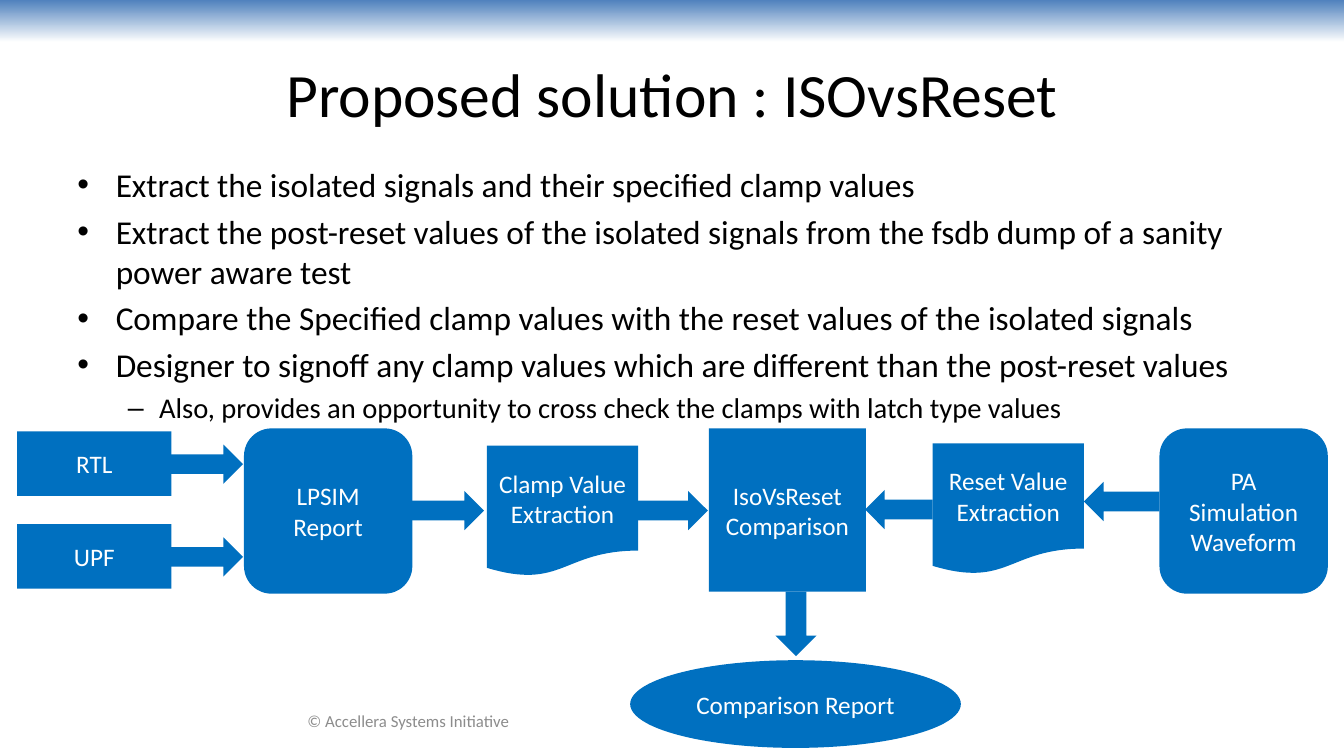
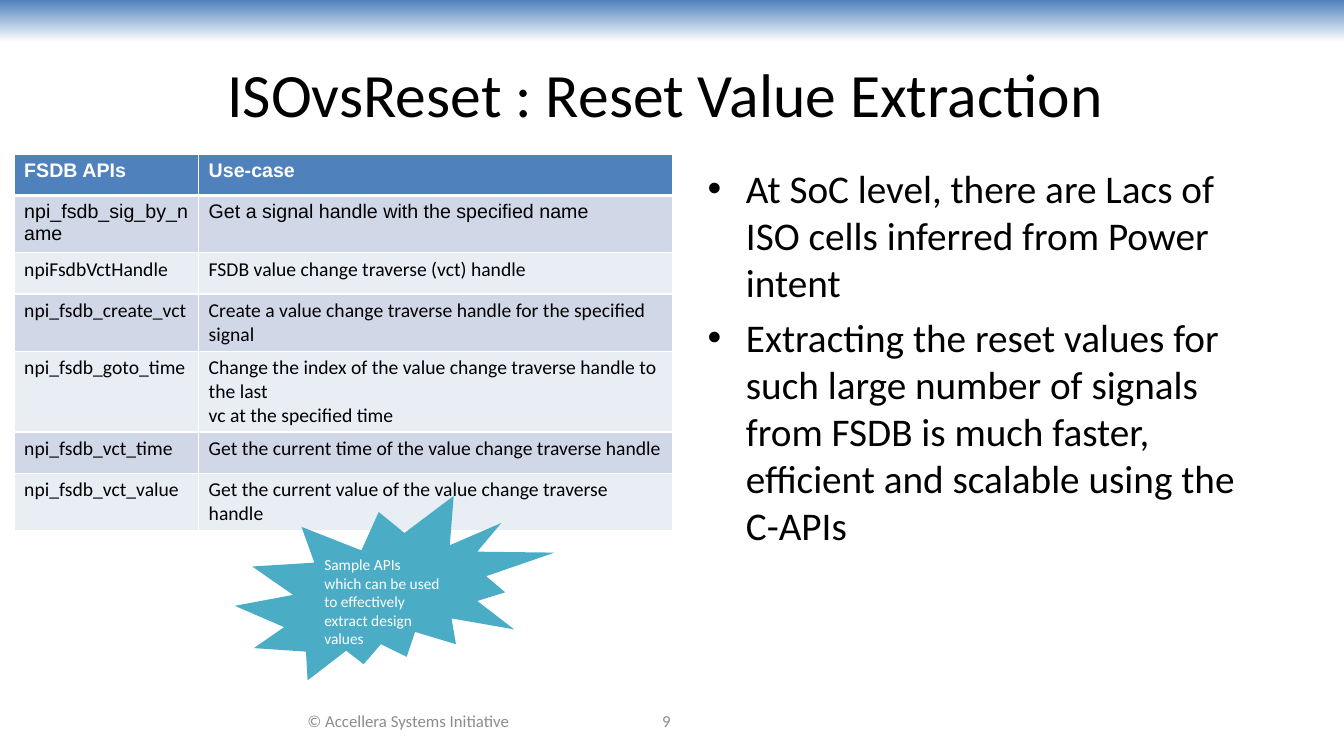
from dataclasses import dataclass
from typing import NamedTuple, Optional

from lxml.etree import SubElement
from pptx import Presentation
from pptx.dml.color import RGBColor
from pptx.enum.shapes import MSO_SHAPE as Preset
from pptx.enum.text import MSO_ANCHOR as Anchor, PP_ALIGN as Align
from pptx.oxml.ns import qn
from pptx.util import Inches, Pt

SLIDE_W, SLIDE_H = 13.33, 7.5
BLACK, WHITE, GREY = "000000", "FFFFFF", "8C8C8C"
BAND_BLUE, FLOW_BLUE, TEAL = "4F81BD", "0070C0", "4BACC6"
ROW_FILLS = ("D0D8E8", "E9EDF4")


class Box(NamedTuple):
    left: float
    top: float
    width: float
    height: float

    def inches(self):
        return [Inches(value) for value in self]


@dataclass(frozen=True)
class TextStyle:
    size: float
    color: str = BLACK
    font: str = "Calibri"
    bold: bool = False
    align: Align = Align.LEFT
    anchor: Anchor = Anchor.TOP


@dataclass(frozen=True)
class Step:
    label: str
    preset: Preset
    box: Box


@dataclass(frozen=True)
class Arrow:
    preset: Preset
    box: Box


@dataclass(frozen=True)
class Bullet:
    text: str
    size: float
    mark: str = "•"
    indent: float = 0.38
    hanging: float = 0.38


TITLE = TextStyle(44, align=Align.CENTER, anchor=Anchor.MIDDLE)
FOOTER = TextStyle(12, GREY, align=Align.CENTER, anchor=Anchor.MIDDLE)
FLOW_LABEL = TextStyle(18, WHITE, align=Align.CENTER, anchor=Anchor.MIDDLE)
CALLOUT = TextStyle(11, WHITE)
HEADER_CELL = TextStyle(14, WHITE, "Arial", bold=True)
FIRST_CELL = TextStyle(14, font="Arial")
CELL = TextStyle(14)

SOURCES = [Step(label, Preset.RECTANGLE, Box(0.17, top, 1.53, 0.64))
           for label, top in (("RTL", 4.28), ("UPF", 5.2))]
STEPS = SOURCES + [
    Step("LPSIM Report", Preset.ROUNDED_RECTANGLE, Box(2.42, 4.25, 1.67, 1.64)),
    Step("Clamp Value Extraction", Preset.FLOWCHART_DOCUMENT, Box(4.83, 4.42, 1.5, 1.3)),
    Step("IsoVsReset Comparison", Preset.RECTANGLE, Box(7.03, 4.25, 1.56, 1.62)),
    Step("Reset Value Extraction", Preset.FLOWCHART_DOCUMENT, Box(9.25, 4.4, 1.5, 1.3)),
    Step("PA Simulation Waveform", Preset.ROUNDED_RECTANGLE, Box(11.5, 4.25, 1.67, 1.64)),
    Step("Comparison Report", Preset.OVAL, Box(6.25, 6.55, 3.28, 0.87)),
]
ARROWS = [Arrow(Preset.RIGHT_ARROW, Box(1.69, source.box.top + 0.13, 0.72, 0.39))
          for source in SOURCES] + [
    Arrow(Preset.RIGHT_ARROW, Box(4.08, 4.87, 0.72, 0.39)),
    Arrow(Preset.RIGHT_ARROW, Box(6.33, 4.87, 0.69, 0.39)),
    Arrow(Preset.LEFT_ARROW, Box(8.58, 4.86, 0.67, 0.39)),
    Arrow(Preset.LEFT_ARROW, Box(10.75, 4.78, 0.75, 0.39)),
    Arrow(Preset.DOWN_ARROW, Box(7.69, 5.87, 0.41, 0.64)),
]

SOLUTION_BULLETS = [Bullet(text, 23.8) for text in (
    "Extract the isolated signals and their specified clamp values",
    "Extract the post-reset values of the isolated signals from the fsdb dump "
    "of a sanity power aware test",
    "Compare the Specified clamp values with the reset values of the isolated signals",
    "Designer to signoff any clamp values which are different than the post-reset values",
)] + [Bullet("Also, provides an opportunity to cross check the clamps with latch type values",
             20.4, "–", 0.81, 0.31)]
EXTRACTION_BULLETS = [Bullet(text, 28) for text in (
    "At SoC level, there are Lacs of ISO cells inferred from Power intent",
    "Extracting the reset values for such large number of signals from FSDB is much faster, "
    "efficient and scalable using the C-APIs",
)]

API_COLUMNS = (1.83, 4.7)
API_ROW_HEIGHT = 0.41
API_ROWS = [
    ("FSDB APIs", "Use-case"),
    ("npi_fsdb_sig_by_name", "Get a signal handle with the specified name"),
    ("npiFsdbVctHandle", "FSDB value change traverse (vct) handle"),
    ("npi_fsdb_create_vct", "Create a value change traverse handle for the specified signal"),
    ("npi_fsdb_goto_time", "Change the index of the value change traverse handle to the last\n"
                           "vc at the specified time"),
    ("npi_fsdb_vct_time", "Get the current time of the value change traverse handle"),
    ("npi_fsdb_vct_value", "Get the current value of the value change traverse handle"),
]


def rgb(color: str) -> RGBColor:
    return RGBColor.from_string(color)


def format_runs(paragraph, style: TextStyle) -> None:
    paragraph.alignment = style.align
    for run in paragraph.runs:
        run.font.size = Pt(style.size)
        run.font.name = style.font
        run.font.bold = style.bold
        run.font.color.rgb = rgb(style.color)


def write(frame, text: str, style: TextStyle) -> None:
    frame.text = text
    frame.word_wrap = True
    frame.vertical_anchor = style.anchor
    for paragraph in frame.paragraphs:
        format_runs(paragraph, style)


def add_text(slide, box: Box, text: str, style: TextStyle) -> None:
    write(slide.shapes.add_textbox(*box.inches()).text_frame, text, style)


def add_filled(slide, preset: Preset, box: Box, color: str):
    shape = slide.shapes.add_shape(preset, *box.inches())
    shape.shadow.inherit = False
    shape.fill.solid()
    shape.fill.fore_color.rgb = rgb(color)
    shape.line.fill.background()
    return shape


def add_bullets(slide, box: Box, bullets: list[Bullet]) -> None:
    frame = slide.shapes.add_textbox(*box.inches()).text_frame
    frame.word_wrap = True
    for index, bullet in enumerate(bullets):
        paragraph = frame.add_paragraph() if index else frame.paragraphs[0]
        paragraph.text = bullet.text
        if index:
            paragraph.space_before = Pt(round(bullet.size * 0.2, 1))
        properties = paragraph._p.get_or_add_pPr()
        properties.set("marL", str(Inches(bullet.indent)))
        properties.set("indent", str(-Inches(bullet.hanging)))
        SubElement(properties, qn("a:buFont"), typeface="Arial")
        SubElement(properties, qn("a:buChar"), char=bullet.mark)
        format_runs(paragraph, TextStyle(bullet.size))


def add_base(deck, title: str, page: Optional[str] = None):
    slide = deck.slides.add_slide(deck.slide_layouts[6])
    band = add_filled(slide, Preset.RECTANGLE, Box(0, 0, SLIDE_W, 0.42), BAND_BLUE)
    band.fill.gradient()
    band.fill.gradient_angle = 270
    for stop, color, position in zip(band.fill.gradient_stops, (BAND_BLUE, WHITE), (0, 1)):
        stop.color.rgb = rgb(color)
        stop.position = position
    add_text(slide, Box(0.67, 0.3, 12, 1.25), title, TITLE)
    add_text(slide, Box(2.44, 6.95, 3.22, 0.4), "© Accellera Systems Initiative", FOOTER)
    if page:
        add_text(slide, Box(5.33, 6.95, 2.56, 0.4), page, FOOTER)
    return slide


def set_borders(cell, bottom: float) -> None:
    properties = cell._tc.get_or_add_tcPr()
    widths = {"a:lnL": 1, "a:lnR": 1, "a:lnT": 1, "a:lnB": bottom}
    for index, (side, width) in enumerate(widths.items()):
        border = SubElement(properties, qn(side), w=str(Pt(width)))
        fill = SubElement(border, qn("a:solidFill"))
        SubElement(fill, qn("a:srgbClr"), val=WHITE)
        properties.insert(index, border)


def add_api_table(slide) -> None:
    box = Box(0.14, 1.53, sum(API_COLUMNS), API_ROW_HEIGHT * len(API_ROWS))
    table = slide.shapes.add_table(len(API_ROWS), len(API_COLUMNS), *box.inches()).table
    for column, width in zip(table.columns, API_COLUMNS):
        column.width = Inches(width)
    for row_index, texts in enumerate(API_ROWS):
        table.rows[row_index].height = Inches(API_ROW_HEIGHT)
        color = ROW_FILLS[(row_index - 1) % 2] if row_index else BAND_BLUE
        style = (HEADER_CELL, FIRST_CELL, CELL)[min(row_index, 2)]
        for cell, text in zip(table.rows[row_index].cells, texts):
            write(cell.text_frame, text, style)
            cell.fill.solid()
            cell.fill.fore_color.rgb = rgb(color)
            set_borders(cell, 1 if row_index else 3)


def build_solution(deck) -> None:
    slide = add_base(deck, "Proposed solution : ISOvsReset")
    add_bullets(slide, Box(0.67, 1.58, 12, 2.58), SOLUTION_BULLETS)
    for step in STEPS:
        shape = add_filled(slide, step.preset, step.box, FLOW_BLUE)
        write(shape.text_frame, step.label, FLOW_LABEL)
    for arrow in ARROWS:
        add_filled(slide, arrow.preset, arrow.box, FLOW_BLUE)


def build_extraction(deck) -> None:
    slide = add_base(deck, "ISOvsReset : Reset Value Extraction ", "9")
    add_bullets(slide, Box(6.92, 1.58, 5.75, 4.42), EXTRACTION_BULLETS)
    add_api_table(slide)
    burst = add_filled(slide, Preset.EXPLOSION2, Box(2.33, 4.92, 3.17, 1.83), TEAL)
    write(burst.text_frame,
          "Sample APIs which can be used to effectively extract design values", CALLOUT)


def main() -> None:
    """Build the two ISOvsReset slides and save the deck."""
    deck = Presentation()
    deck.slide_width, deck.slide_height = Inches(SLIDE_W), Inches(SLIDE_H)
    build_solution(deck)
    build_extraction(deck)
    deck.save("out.pptx")


if __name__ == "__main__":
    main()
